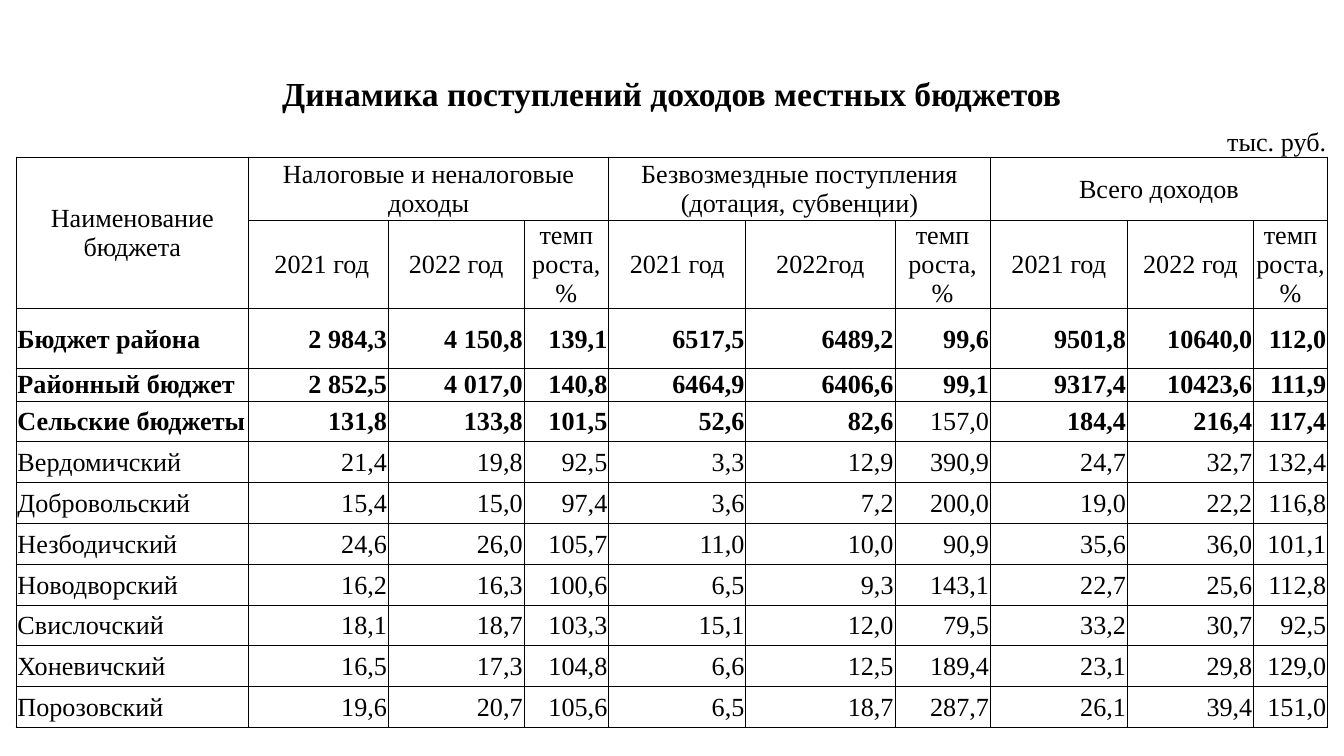
"""Build a slide with a table of local budget revenues."""
from lxml import etree
from pptx import Presentation
from pptx.dml.color import RGBColor
from pptx.enum.text import MSO_ANCHOR, PP_ALIGN
from pptx.oxml.ns import qn
from pptx.util import Inches, Pt

LEFT, CENTER, RIGHT = PP_ALIGN.LEFT, PP_ALIGN.CENTER, PP_ALIGN.RIGHT
TOP, MIDDLE, BOTTOM = MSO_ANCHOR.TOP, MSO_ANCHOR.MIDDLE, MSO_ANCHOR.BOTTOM

COLORS = {"ink": "000000"}
FONT = "Times New Roman"
TITLE_SIZE, TEXT_SIZE, BORDER = 18, 14, 0.5
SLIDE_WIDTH = 10
SLIDE_HEIGHT = SLIDE_WIDTH * 9 / 16

TITLE = "Динамика поступлений доходов местных бюджетов"
UNIT = "тыс. руб."
GROUPS = ["Наименование бюджета", "Налоговые и неналоговые доходы",
          "Безвозмездные поступления (дотация, субвенции)", "Всего доходов"]
GROWTH = "темп\nроста, %"
PERIODS = [" 2021 год", "2022 год", GROWTH, "2021 год", "2022год", GROWTH,
           "2021 год", "2022 год", GROWTH]
BUDGETS = [
    ("Бюджет района", "2 984,3", "4 150,8", "139,1", "6517,5", "6489,2", "99,6",
     "9501,8", "10640,0", "112,0"),
    ("Районный бюджет", "2 852,5", "4 017,0", "140,8", "6464,9", "6406,6", "99,1",
     "9317,4", "10423,6", "111,9"),
    ("Сельские бюджеты", "131,8", "133,8", "101,5", "52,6", "82,6", "157,0",
     "184,4", "216,4", "117,4"),
    ("Вердомичский", "21,4", "19,8", "92,5", "3,3", "12,9", "390,9", "24,7", "32,7", "132,4"),
    ("Добровольский", "15,4", "15,0", "97,4", "3,6", "7,2", "200,0", "19,0", "22,2", "116,8"),
    ("Незбодичский", "24,6", "26,0", "105,7", "11,0", "10,0", "90,9", "35,6", "36,0", "101,1"),
    ("Новодворский", "16,2", "16,3", "100,6", "6,5", "9,3", "143,1", "22,7", "25,6", "112,8"),
    ("Свислочский", "18,1", "18,7", "103,3", "15,1", "12,0", "79,5", "33,2", "30,7", "92,5"),
    ("Хоневичский", "16,5", "17,3", "104,8", "6,6", "12,5", "189,4", "23,1", "29,8", "129,0"),
    ("Порозовский", "19,6", "20,7", "105,6", "6,5", "18,7", "287,7", "26,1", "39,4", "151,0"),
]
BOLD_BUDGETS, PLAIN_VALUE = 3, "157,0"
TOP_ALIGNED = "Районный бюджет"

COL_WIDTHS = [1.73, 1.04, 0.74, 0.27, 0.63, 0.89, 0.13, 1.11, 0.71, 0.73, 0.29, 0.6, 0.34, 0.55]
VILLAGE_ROWS = 8
ROW_HEIGHTS = [0.32, 0.32, 0.47, 0.47, 0.45, 0.24] + [2.43 / VILLAGE_ROWS] * VILLAGE_ROWS
TITLE_SPANS = [14]
UNIT_SPANS = [1, 2, 3, 3, 1, 2, 2]
GROUP_SPANS = [1, 4, 4, 5]
VALUE_SPANS = [1, 1, 2, 1, 2, 1, 1, 2, 2, 1]
TITLE_ROW, UNIT_ROW, GROUP_ROW, PERIOD_ROW, FIRST_BUDGET_ROW = range(5)
MARGINS = {"margin_left": 0.01, "margin_right": 0.01, "margin_top": 0.01, "margin_bottom": 0}


def set_borders(cell, sides):
    """Draw the listed sides of a cell and clear the others."""
    tc_pr = cell._tc.get_or_add_tcPr()
    for i, side in enumerate("LRTB"):
        ln = etree.Element(qn(f"a:ln{side}"), w=str(Pt(BORDER)))
        if side in sides:
            fill = etree.SubElement(ln, qn("a:solidFill"))
            etree.SubElement(fill, qn("a:srgbClr"), val=COLORS["ink"])
        else:
            etree.SubElement(ln, qn("a:noFill"))
        tc_pr.insert(i, ln)


def format_cell(cell, sides):
    """Set the margins, fill, borders and empty-text size of a cell."""
    for name, value in MARGINS.items():
        setattr(cell, name, Inches(value))
    cell.fill.background()
    set_borders(cell, sides)
    end = etree.SubElement(cell.text_frame.paragraphs[0]._p, qn("a:endParaRPr"))
    end.set("sz", str(TEXT_SIZE * 100))


def write_cell(cell, text, align, anchor=MIDDLE, size=TEXT_SIZE, bold=False):
    """Write text into a cell, one paragraph a line."""
    cell.vertical_anchor = anchor
    tf = cell.text_frame
    for i, line in enumerate(text.split("\n")):
        p = tf.paragraphs[0] if i == 0 else tf.add_paragraph()
        p.alignment = align
        r = p.add_run()
        r.text = line
        for name, value in {"name": FONT, "size": Pt(size), "bold": bold}.items():
            setattr(r.font, name, value)
        r.font.color.rgb = RGBColor.from_string(COLORS["ink"])


def merge_row(table, row, spans):
    """Merge a row by its column spans and return the leading cells."""
    cells, col = [], 0
    for span in spans:
        cell = table.cell(row, col)
        if span > 1:
            cell.merge(table.cell(row, col + span - 1))
        cells.append(cell)
        col += span
    return cells


def main():
    """Create the presentation and save it."""
    prs = Presentation()
    prs.slide_width, prs.slide_height = Inches(SLIDE_WIDTH), Inches(SLIDE_HEIGHT)
    s = prs.slides.add_slide(prs.slide_layouts[6])
    table = s.shapes.add_table(len(ROW_HEIGHTS), len(COL_WIDTHS), Inches(0.12), Inches(0.53),
                               Inches(sum(COL_WIDTHS)), Inches(sum(ROW_HEIGHTS))).table
    table.first_row = table.horz_banding = False
    for column, width in zip(table.columns, COL_WIDTHS):
        column.width = Inches(width)
    for i, (row, height) in enumerate(zip(table.rows, ROW_HEIGHTS)):
        row.height = Inches(height)
        sides = {TITLE_ROW: "", UNIT_ROW: "B"}.get(i, "LRTB")
        for cell in row.cells:
            format_cell(cell, sides)

    title = merge_row(table, TITLE_ROW, TITLE_SPANS)[0]
    write_cell(title, TITLE, CENTER, BOTTOM, TITLE_SIZE, True)
    write_cell(merge_row(table, UNIT_ROW, UNIT_SPANS)[-1], UNIT, RIGHT, BOTTOM)
    for cell, text in zip(merge_row(table, GROUP_ROW, GROUP_SPANS), GROUPS):
        write_cell(cell, text, CENTER)
    name_cell, *period_cells = merge_row(table, PERIOD_ROW, VALUE_SPANS)
    for cell, text in zip(period_cells, PERIODS):
        write_cell(cell, text, CENTER)
    table.cell(GROUP_ROW, 0).merge(name_cell)

    for i, budget in enumerate(BUDGETS):
        anchor = TOP if budget[0] == TOP_ALIGNED else MIDDLE
        cells = merge_row(table, FIRST_BUDGET_ROW + i, VALUE_SPANS)
        for j, (cell, text) in enumerate(zip(cells, budget)):
            bold = i < BOLD_BUDGETS and text != PLAIN_VALUE
            write_cell(cell, text, RIGHT if j else LEFT, anchor, bold=bold)
    prs.save("out.pptx")


if __name__ == "__main__":
    main()
